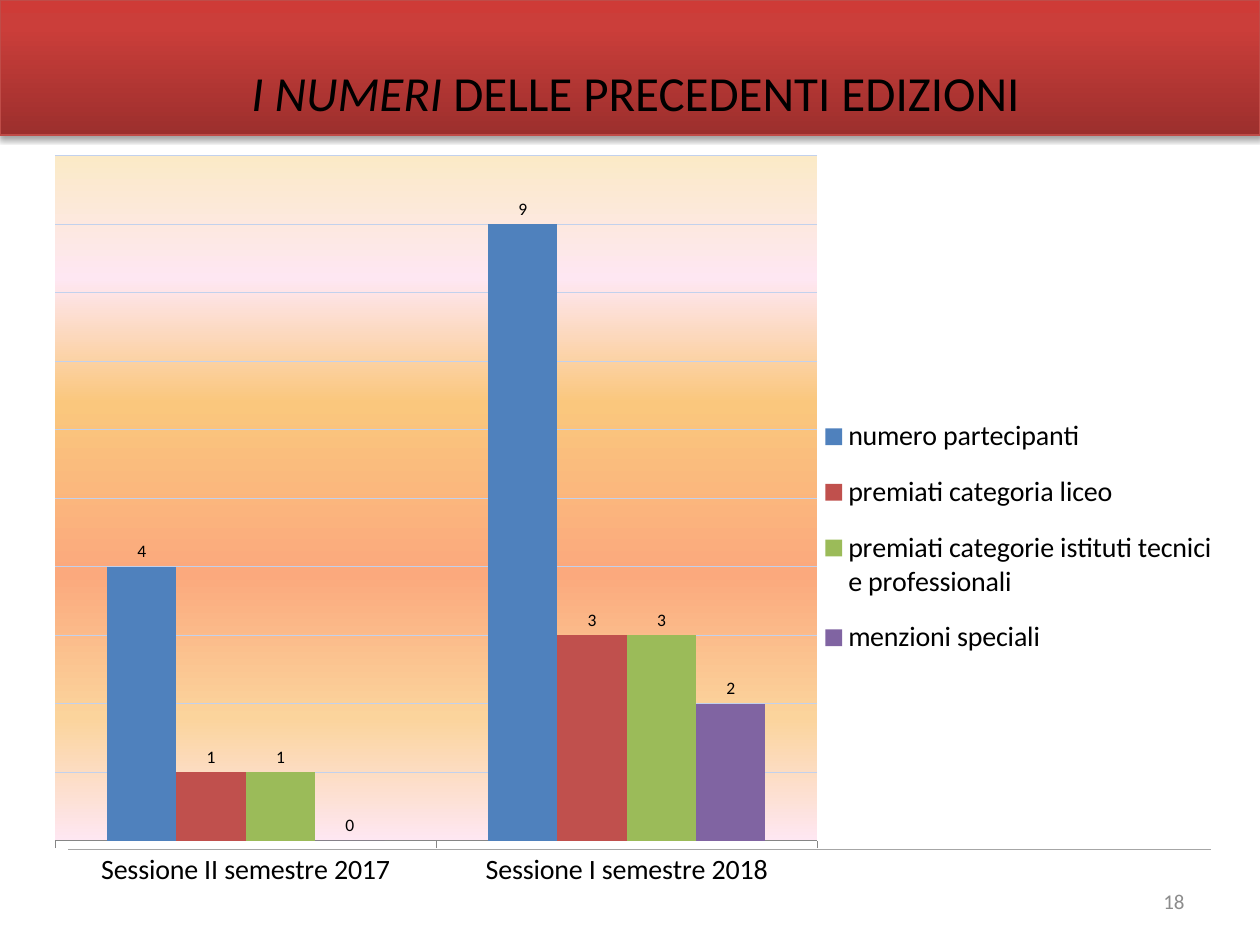
"""Build the slide with the figures of the previous editions."""
from lxml.etree import SubElement
from pptx import Presentation
from pptx.chart.data import CategoryChartData
from pptx.dml.color import RGBColor
from pptx.enum.chart import XL_CHART_TYPE, XL_LABEL_POSITION, XL_LEGEND_POSITION, XL_TICK_MARK
from pptx.enum.shapes import MSO_CONNECTOR, MSO_SHAPE
from pptx.enum.text import MSO_ANCHOR, PP_ALIGN
from pptx.oxml import parse_xml
from pptx.oxml.ns import nsdecls, qn
from pptx.util import Pt

FONT = "Calibri"
TITLE = [("I NUMERI ", True), ("DELLE PRECEDENTI EDIZIONI", False)]
PAGE_NUMBER = "18"
SESSIONS = ["Sessione II semestre 2017", "Sessione I semestre 2018"]
COUNTS = [
    ("numero partecipanti", (4, 9), "4F81BD"),
    ("premiati categoria liceo", (1, 3), "C0504D"),
    ("premiati categorie istituti tecnici e professionali", (1, 3), "9BBB59"),
    ("menzioni speciali", (0, 2), "8064A2"),
]
BANNER_STOPS = [(0, "9C2F2D"), (80, "CB3E3A"), (100, "CE3B37")]
PLOT_STOPS = [(0, "FBEAC7"), (18, "FEE7F2"), (36, "FAC77D"),
              (61, "FBA97D"), (82, "FBD49C"), (100, "FEE7F2")]
CHART_BOX = (20, 88.5, 680.5, 425.5)
PLOT_BOX = (11.5, 0.5, 435.5, 391.5)
LEGEND_BOX = (447, 139, 230, 159)


def color(code):
    return RGBColor.from_string(code)


def gradient(stops, angle):
    marks = "".join(f'<a:gs pos="{place * 1000}"><a:srgbClr val="{code}"/></a:gs>'
                    for place, code in stops)
    return parse_xml(f'<a:gradFill {nsdecls("a")} rotWithShape="1"><a:gsLst>{marks}</a:gsLst>'
                     f'<a:lin ang="{angle * 60000}" scaled="0"/></a:gradFill>')


def style_font(font, size, code="000000"):
    font.name, font.size, font.color.rgb = FONT, Pt(size), color(code)


def style_line(line, code):
    line.color.rgb, line.width = color(code), Pt(0.75)


def chart_layout(box, target=""):
    modes = "".join(f'<c:{side}Mode val="edge"/>' for side in "xy")
    extents = "".join(f'<c:{side} val="{length / whole}"/>'
                      for side, length, whole in zip("xywh", box, CHART_BOX[2:] * 2))
    return parse_xml(f'<c:layout {nsdecls("c")}><c:manualLayout>{target}{modes}{extents}'
                     '</c:manualLayout></c:layout>')


def place_part(part, index, layout):
    for old in part.findall(qn("c:layout")):
        part.remove(old)
    part.insert(index, layout)


def add_banner(slide):
    banner = slide.shapes.add_shape(MSO_SHAPE.RECTANGLE, 0, 0, Pt(720), Pt(77.25))
    banner.fill.background()
    style_line(banner.line, "BF4C48")
    props = banner.element.spPr
    props.replace(props.find(qn("a:noFill")), gradient(BANNER_STOPS, 270))
    props.append(parse_xml(
        f'<a:effectLst {nsdecls("a")}><a:outerShdw blurRad="{Pt(3.1)}" dist="{Pt(1.8)}" '
        'dir="5400000" rotWithShape="0"><a:srgbClr val="000000"><a:alpha val="35000"/>'
        '</a:srgbClr></a:outerShdw></a:effectLst>'))


def add_footer_rule(slide):
    rule = slide.shapes.add_connector(MSO_CONNECTOR.STRAIGHT, Pt(39), Pt(485.5), Pt(692), Pt(485.5))
    style_line(rule.line, "A6A6A6")
    SubElement(rule.element.spPr, qn("a:effectLst"))


def add_text(slide, box, parts, align, anchor, size, code):
    frame = slide.shapes.add_textbox(*map(Pt, box)).text_frame
    frame.word_wrap, frame.vertical_anchor = True, anchor
    paragraph = frame.paragraphs[0]
    paragraph.alignment = align
    for words, italic in parts:
        run = paragraph.add_run()
        run.text = words
        style_font(run.font, size, code)
        run.font.italic = italic


def add_counts_chart(slide):
    data = CategoryChartData()
    data.categories = SESSIONS
    for name, values, _ in COUNTS:
        data.add_series(name, values)
    chart = slide.shapes.add_chart(XL_CHART_TYPE.COLUMN_CLUSTERED,
                                   *map(Pt, CHART_BOX), data).chart
    style_font(chart.font, 10)
    chart.has_title = False
    chart.has_legend = True
    chart.legend.position = XL_LEGEND_POSITION.RIGHT
    chart.legend.include_in_layout = False
    style_font(chart.legend.font, 16)

    sessions_axis, counts_axis = chart.category_axis, chart.value_axis
    sessions_axis.major_tick_mark = XL_TICK_MARK.OUTSIDE
    style_font(sessions_axis.tick_labels.font, 16)
    style_line(sessions_axis.format.line, "868686")
    counts_axis.visible = False
    counts_axis.minimum_scale, counts_axis.maximum_scale, counts_axis.major_unit = 0, 10, 1
    style_line(counts_axis.major_gridlines.format.line, "C2D1ED")

    columns = chart.plots[0]
    columns.gap_width, columns.overlap, columns.vary_by_categories = 150, 0, False
    for series, (_, _, code) in zip(columns.series, COUNTS):
        series.format.fill.solid()
        series.format.fill.fore_color.rgb = color(code)
        labels = series.data_labels
        labels.show_value = True
        labels.position = XL_LABEL_POSITION.OUTSIDE_END
        style_font(labels.font, 10)

    area = chart.element.find(".//" + qn("c:plotArea"))
    place_part(area, 0, chart_layout(PLOT_BOX, '<c:layoutTarget val="inner"/>'))
    SubElement(area, qn("c:spPr")).append(gradient(PLOT_STOPS, 90))
    place_part(chart.element.find(".//" + qn("c:legend")), 1, chart_layout(LEGEND_BOX))


def main():
    deck = Presentation()
    deck.slide_width, deck.slide_height = Pt(720), Pt(540)
    slide = deck.slides.add_slide(deck.slide_layouts[6])
    add_banner(slide)
    add_footer_rule(slide)
    add_text(slide, (516, 500.5, 168, 29), [(PAGE_NUMBER, False)],
             PP_ALIGN.RIGHT, MSO_ANCHOR.MIDDLE, 12, "8C8C8C")
    add_text(slide, (37, 32, 652, 68), TITLE, PP_ALIGN.CENTER, MSO_ANCHOR.TOP, 28, "000000")
    add_counts_chart(slide)
    deck.save("out.pptx")


if __name__ == "__main__":
    main()
